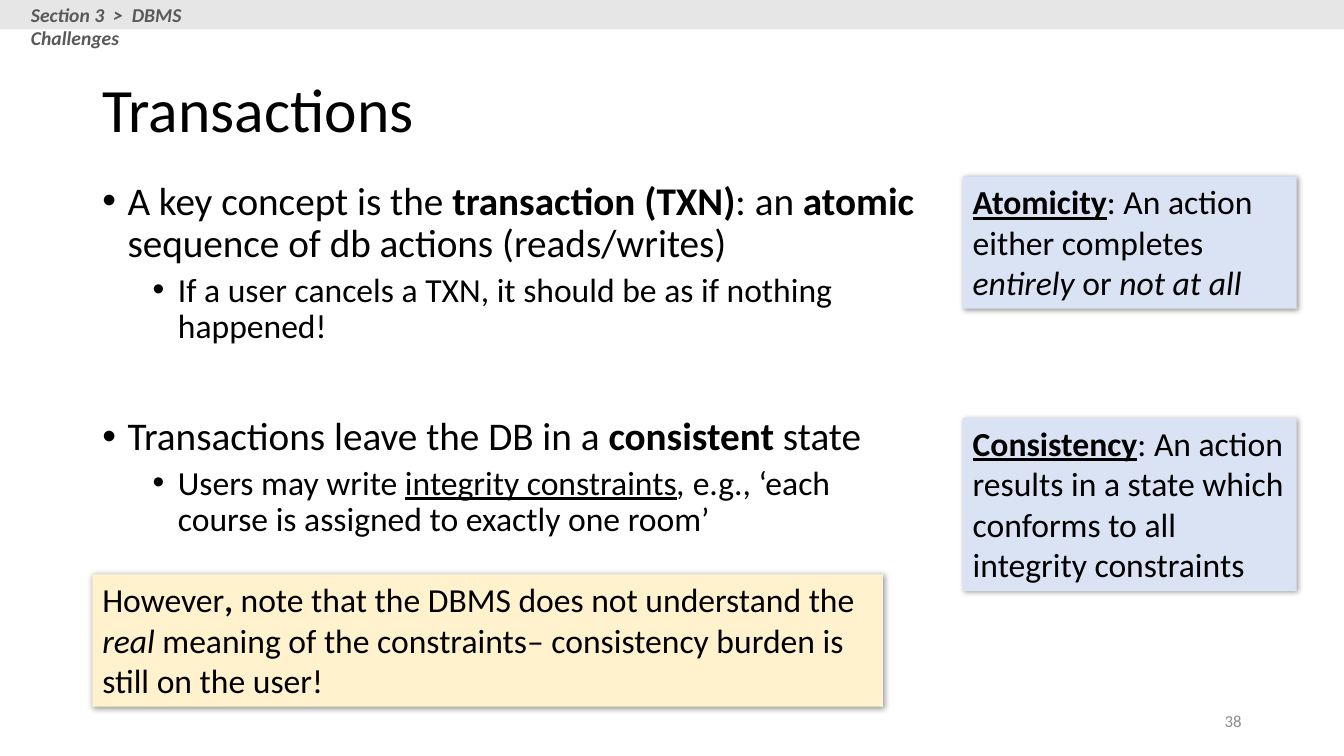
import pptx
import pptx.util
import pptx.dml.color
import pptx.enum.shapes
import pptx.enum.text
import pptx.oxml
import pptx.oxml.ns

RGB = pptx.dml.color.RGBColor
BLACK = RGB(0x00, 0x00, 0x00)
BLUE = RGB(0xDA, 0xE3, 0xF3)
CREAM = RGB(0xFF, 0xF2, 0xCC)
BAND = RGB(0xE7, 0xE6, 0xE6)
DARK = RGB(0x59, 0x59, 0x59)
GREY = RGB(0x8C, 0x8C, 0x8C)
PX = 9525  # EMU per px, 96 px to the inch
NS = pptx.oxml.ns.nsdecls("a")
ALIGN = pptx.enum.text.PP_ALIGN
MIDDLE = pptx.enum.text.MSO_ANCHOR.MIDDLE
RECT = pptx.enum.shapes.MSO_SHAPE.RECTANGLE
SHADOW = (f'<a:outerShdw {NS} blurRad="50800" dist="12700" dir="2700000" algn="tl" rotWithShape="0">'
          '<a:srgbClr val="000000"><a:alpha val="40000"/></a:srgbClr></a:outerShdw>')


def place(*box):
    return [n * PX for n in box]


def write(para, parts, size, color=BLACK):
    """Add (text, style) runs; style letters are b, i and u."""
    for text, style in parts:
        run = para.add_run()
        run.text = text
        font = run.font
        font.name = "Calibri"
        font.size = pptx.util.Pt(size)
        font.color.rgb = color
        font.bold = "b" in style
        font.italic = "i" in style
        font.underline = "u" in style


deck = pptx.Presentation()
deck.slide_width, deck.slide_height = place(1280, 720)
slide = deck.slides.add_slide(deck.slide_layouts[5])
shapes = slide.shapes

# Title
title = shapes.title
title.left, title.top, title.width, title.height = place(88, 38, 1104, 139)
frame = title.text_frame
frame.auto_size = pptx.enum.text.MSO_AUTO_SIZE.NONE
frame.vertical_anchor = MIDDLE
para = frame.paragraphs[0]
para.alignment = ALIGN.LEFT
para.line_spacing = 0.9
write(para, [("Transactions", "")], 44)

# Bulleted body: level, space before, runs
points = [
    (0, 10, [("A key concept is the ", ""), ("transaction (TXN)", "b"), (": an ", ""),
             ("atomic ", "b"), ("sequence of db actions (reads/writes)", "")]),
    (1, 5, [("If a user cancels a TXN, it should be as if nothing happened!", "")]),
    (0, 51, [("Transactions leave the DB in a ", ""), ("consistent", "b"), (" state", "")]),
    (1, 5, [("Users may write ", ""), ("integrity constraints", "u"), (",", "i"),
            (" e.g., ‘each course is assigned to exactly one room’", "")]),
]
frame = shapes.add_textbox(*place(88, 168, 805, 513)).text_frame
frame.word_wrap = True
for i, (level, gap, parts) in enumerate(points):
    para = frame.add_paragraph() if i else frame.paragraphs[0]
    para.level = level
    para.line_spacing = 0.9
    para.space_before = pptx.util.Pt(gap)
    props = para._p.get_or_add_pPr()
    props.set("marL", str((24 + 48 * level) * PX))
    props.set("indent", str(-24 * PX))
    props.append(pptx.oxml.parse_xml(f'<a:buFont {NS} typeface="Arial"/>'))
    props.append(pptx.oxml.parse_xml(f'<a:buChar {NS} char="•"/>'))
    write(para, parts, 28 - 4 * level)

# Header band
band = shapes.add_shape(RECT, *place(0, 0, 1280, 28))
band.shadow.inherit = False
band.fill.solid()
band.fill.fore_color.rgb = BAND
band.line.fill.background()

# Header text and slide number
labels = [
    ((20, -2, 247, 33), "Section 3  >  DBMS Challenges", "bi", 14, DARK, ALIGN.LEFT),
    ((904, 667, 288, 38), "38", "", 12, GREY, ALIGN.RIGHT),
]
for box, text, style, size, color, align in labels:
    frame = shapes.add_textbox(*place(*box)).text_frame
    frame.word_wrap = True
    if align == ALIGN.RIGHT:
        frame.vertical_anchor = MIDDLE
    para = frame.paragraphs[0]
    para.alignment = align
    write(para, [(text, style)], size, color)

# Shadowed note cards
cards = [
    ((917, 168, 318, 126), BLUE,
     [("Atomicity", "bu"), (": An action either completes ", ""), ("entirely", "i"),
      (" or ", ""), ("not at all", "i")]),
    ((917, 398, 318, 165), BLUE,
     [("Consistency", "bu"),
      (": An action results in a state which conforms to all integrity constraints", "")]),
    ((88, 547, 753, 126), CREAM,
     [("However", ""), (",", "b"), (" note that the DBMS does not understand the ", ""),
      ("real ", "i"),
      ("meaning of the constraints– consistency burden is still on the user!", "")]),
]
for box, color, parts in cards:
    card = shapes.add_shape(RECT, *place(*box))
    card.fill.solid()
    card.fill.fore_color.rgb = color
    card.line.fill.background()
    card.shadow.inherit = False
    effects = card._element.spPr.find(pptx.oxml.ns.qn("a:effectLst"))
    effects.append(pptx.oxml.parse_xml(SHADOW))
    frame = card.text_frame
    frame.word_wrap = True
    frame.vertical_anchor = pptx.enum.text.MSO_ANCHOR.TOP
    para = frame.paragraphs[0]
    para.alignment = ALIGN.LEFT
    write(para, parts, 24)

deck.save("out.pptx")
